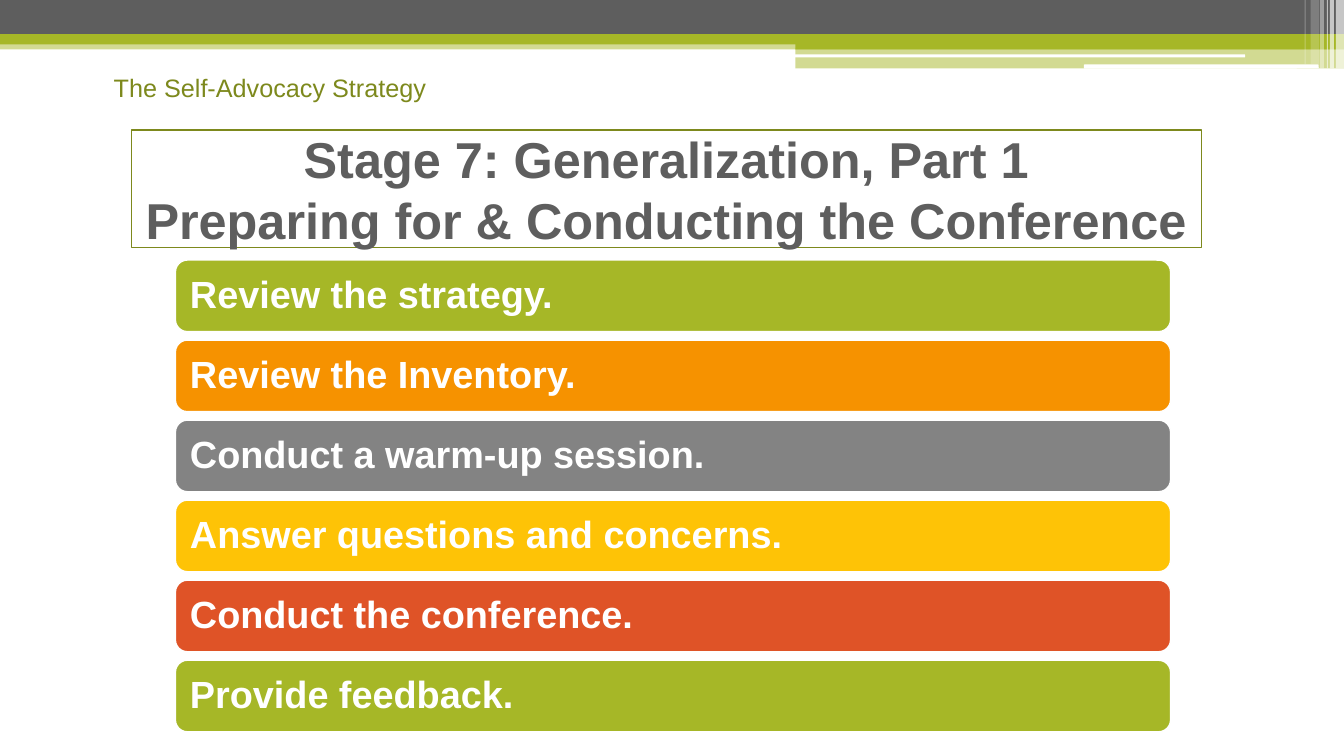
from lxml import etree
from pptx import Presentation
from pptx.dml.color import RGBColor
from pptx.enum.shapes import MSO_SHAPE
from pptx.enum.text import MSO_ANCHOR, PP_ALIGN
from pptx.oxml.ns import qn
from pptx.util import Inches, Pt

RECTANGLE = MSO_SHAPE.RECTANGLE
ROUNDED = MSO_SHAPE.ROUNDED_RECTANGLE
MIDDLE = MSO_ANCHOR.MIDDLE
LEFT = PP_ALIGN.LEFT
CENTER = PP_ALIGN.CENTER

WHITE = RGBColor(0xFF, 0xFF, 0xFF)
GREEN = RGBColor(0xA6, 0xB7, 0x27)
OLIVE = RGBColor(0x7D, 0x89, 0x1D)
DARK_GRAY = RGBColor(0x5E, 0x5E, 0x5E)
GRAY = RGBColor(0x83, 0x83, 0x83)
ORANGE = RGBColor(0xF6, 0x92, 0x00)
YELLOW = RGBColor(0xFE, 0xC3, 0x06)
RED = RGBColor(0xDF, 0x53, 0x27)

presentation = Presentation()
presentation.slide_width = Inches(13.33)
presentation.slide_height = Inches(7.5)
slide = presentation.slides.add_slide(presentation.slide_layouts[6])


def add_block(kind, left, top, width, height, color, opacity=100):
    shape = slide.shapes.add_shape(
        kind, Inches(left), Inches(top), Inches(width), Inches(height))
    shape.shadow.inherit = False
    shape.fill.solid()
    shape.fill.fore_color.rgb = color
    shape.line.fill.background()
    if opacity < 100:
        color_element = shape.fill._xPr.find(qn("a:solidFill"))[0]
        alpha = etree.SubElement(color_element, qn("a:alpha"))
        alpha.set("val", str(opacity * 1000))
    return shape


def add_text(paragraph, text, size, color, bold=False):
    run = paragraph.add_run()
    run.text = text
    run.font.name = "Arial"
    run.font.size = Pt(size)
    run.font.bold = bold
    run.font.color.rgb = color


header_bands = [
    (RECTANGLE, 0, 0.4, 13.33, 0.09, GREEN, 50),
    (RECTANGLE, 0, 0, 13.33, 0.34, DARK_GRAY, 100),
    (RECTANGLE, 0, 0.34, 13.33, 0.1, GREEN, 100),
    (RECTANGLE, 7.89, 0.39, 5.44, 0.1, GREEN, 100),
    (RECTANGLE, 7.89, 0.48, 5.44, 0.2, GREEN, 50),
    (ROUNDED, 7.88, 0.54, 4.47, 0.03, WHITE, 100),
    (ROUNDED, 10.75, 0.64, 2.33, 0.04, WHITE, 100),
]
for band in header_bands:
    add_block(*band)

corner_stripes = [
    (13.25, 0.08, 0.68, 65),
    (13.19, 0.04, 0.68, 65),
    (13.16, 0.01, 0.68, 60),
    (13.09, 0.04, 0.68, 40),
    (13, 0.08, 0.64, 20),
    (12.94, 0.01, 0.64, 30),
]
for left, width, height, opacity in corner_stripes:
    add_block(RECTANGLE, left, 0, width, height, WHITE, opacity)

strategy_label = slide.shapes.add_textbox(
    Inches(1.03), Inches(0.67), Inches(3.33), Inches(0.4))
strategy_label.text_frame.word_wrap = False
add_text(strategy_label.text_frame.paragraphs[0],
         "The Self-Advocacy Strategy", 18, OLIVE)

steps = [
    ("Review the strategy.", GREEN),
    ("Review the Inventory.", ORANGE),
    ("Conduct a warm-up session.", GRAY),
    ("Answer questions and concerns.", YELLOW),
    ("Conduct the conference.", RED),
    ("Provide feedback.", GREEN),
]
first_top, last_top = 2.58, 6.55
step_pitch = (last_top - first_top) / (len(steps) - 1)
for index, (text, color) in enumerate(steps):
    bar = add_block(ROUNDED, 1.74, first_top + index * step_pitch, 9.87, 0.71, color)
    bar.line.color.rgb = WHITE
    bar.line.width = Pt(1)
    frame = bar.text_frame
    frame.word_wrap = True
    frame.vertical_anchor = MIDDLE
    frame.margin_left = frame.margin_right = Inches(0.11)
    frame.margin_top = frame.margin_bottom = Inches(0.11)
    paragraph = frame.paragraphs[0]
    paragraph.alignment = LEFT
    paragraph.line_spacing = 0.9
    add_text(paragraph, text, 27, WHITE, bold=True)

title = slide.shapes.add_textbox(
    Inches(1.3), Inches(1.29), Inches(10.62), Inches(1.17))
title.line.color.rgb = OLIVE
title.line.width = Pt(0.75)
title.text_frame.word_wrap = True
title.text_frame.vertical_anchor = MIDDLE
paragraph = title.text_frame.paragraphs[0]
paragraph.alignment = CENTER
add_text(paragraph, "Stage 7: Generalization, Part 1", 36, DARK_GRAY, bold=True)
paragraph.add_line_break()
add_text(paragraph, "Preparing for & Conducting the Conference", 36, DARK_GRAY, bold=True)

presentation.save("out.pptx")
